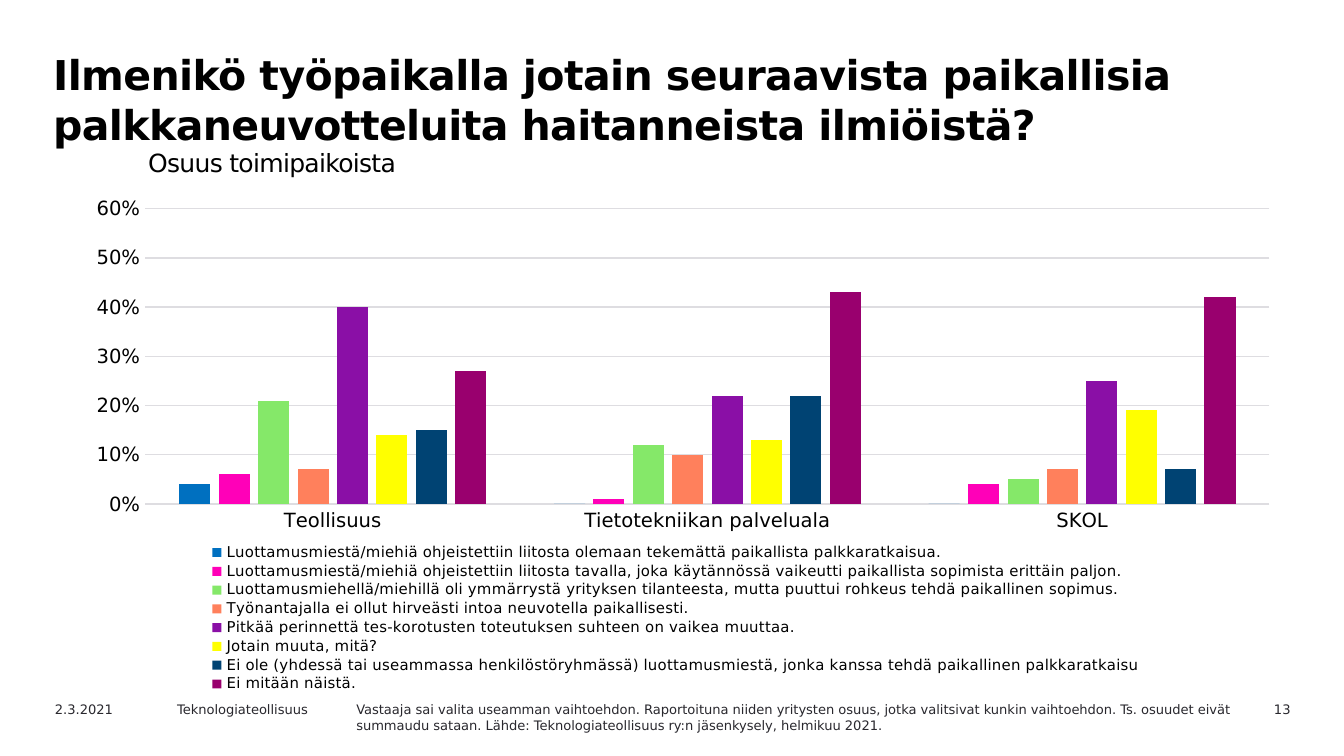
from dataclasses import dataclass

from lxml import etree
from pptx import Presentation
from pptx.chart.data import CategoryChartData
from pptx.dml.color import RGBColor
from pptx.enum.chart import XL_CHART_TYPE, XL_LEGEND_POSITION, XL_TICK_MARK
from pptx.enum.text import MSO_ANCHOR, MSO_AUTO_SIZE, PP_ALIGN
from pptx.oxml.ns import qn
from pptx.util import Cm, Pt

CLUSTERED = XL_CHART_TYPE.COLUMN_CLUSTERED
LEGEND_BOTTOM = XL_LEGEND_POSITION.BOTTOM
NO_TICK = XL_TICK_MARK.NONE
TOP = MSO_ANCHOR.TOP
NO_AUTOFIT = MSO_AUTO_SIZE.NONE
LEFT, RIGHT = PP_ALIGN.LEFT, PP_ALIGN.RIGHT


@dataclass(frozen=True)
class Theme:
    """Font, colours and type sizes of the slide."""

    font: str = "DejaVu Sans"
    ink: str = "000000"
    muted: str = "29282E"
    grid: str = "DEDDE1"
    title: float = 22
    subtitle: float = 13.4
    chart: float = 10
    axis: float = 10.5
    legend: float = 8
    footer: float = 7
    rule: float = 0.75


THEME = Theme()

TITLE = ("Ilmenikö työpaikalla jotain seuraavista paikallisia "
         "palkkaneuvotteluita haitanneista ilmiöistä?")
FOOTNOTE = ("Vastaaja sai valita useamman vaihtoehdon. Raportoituna niiden yritysten "
            "osuus, jotka valitsivat kunkin vaihtoehdon. Ts. osuudet eivät summaudu "
            "sataan. Lähde: Teknologiateollisuus ry:n jäsenkysely, helmikuu 2021.")
FOOTER_TOP, FOOTER_HEIGHT = 13.13, 0.46

SECTORS = ("Teollisuus", "Tietotekniikan palveluala", "SKOL")
ANSWERS = (
    ("Luottamusmiestä/miehiä ohjeistettiin liitosta olemaan tekemättä paikallista "
     "palkkaratkaisua.", "0070C0", (0.04, 0, 0)),
    ("Luottamusmiestä/miehiä ohjeistettiin liitosta tavalla, joka käytännössä vaikeutti "
     "paikallista sopimista erittäin paljon.", "FF00B8", (0.06, 0.01, 0.04)),
    ("Luottamusmiehellä/miehillä oli ymmärrystä yrityksen tilanteesta, mutta puuttui "
     "rohkeus tehdä paikallinen sopimus.", "85E869", (0.21, 0.12, 0.05)),
    ("Työnantajalla ei ollut hirveästi intoa neuvotella paikallisesti.",
     "FF805C", (0.07, 0.1, 0.07)),
    ("Pitkää perinnettä tes-korotusten toteutuksen suhteen on vaikea muuttaa.",
     "8A0FA6", (0.4, 0.22, 0.25)),
    ("Jotain muuta, mitä?", "FFFF00", (0.14, 0.13, 0.19)),
    ("Ei ole (yhdessä tai useammassa henkilöstöryhmässä) luottamusmiestä, jonka kanssa "
     "tehdä paikallinen palkkaratkaisu", "004373", (0.15, 0.22, 0.07)),
    ("Ei mitään näistä.", "99006E", (0.27, 0.43, 0.42)),
)
PLOT_AREA = {"x": 0.072, "y": 0.041, "w": 0.911, "h": 0.601}
LEGEND_AREA = {"x": 0.12, "y": 0.715, "w": 0.765, "h": 0.284}


def style_font(font, size, color, bold=False):
    """Apply the theme font with a size, colour and weight."""
    font.name = THEME.font
    font.size = Pt(size)
    font.bold = bold
    font.color.rgb = RGBColor.from_string(color)


def place(shape, left, top, width, height):
    """Move and size a shape, in centimetres."""
    shape.left, shape.top = Cm(left), Cm(top)
    shape.width, shape.height = Cm(width), Cm(height)


def write(shape, text, size, color, bold=False, align=LEFT, tracking=0):
    """Write one plain paragraph into a shape and return it."""
    frame = shape.text_frame
    frame.word_wrap = True
    frame.auto_size = NO_AUTOFIT
    frame.vertical_anchor = TOP
    paragraph = frame.paragraphs[0]
    properties = paragraph._p.get_or_add_pPr()
    properties.set("marL", "0")
    properties.set("indent", "0")
    etree.SubElement(properties, qn("a:buNone"))
    paragraph.alignment = align
    paragraph.space_before = Pt(0)
    run = paragraph.add_run()
    run.text = text
    style_font(run.font, size, color, bold)
    if tracking:
        run.font._element.set("spc", str(round(tracking * 100)))
    return paragraph


def add_title(slide):
    """Fill the title placeholder."""
    heading = slide.shapes.title
    place(heading, 0.75, 0.78, 22.2, 1.8)
    paragraph = write(heading, TITLE, THEME.title, THEME.ink, bold=True, tracking=-0.3)
    paragraph.line_spacing = Pt(27)


def add_subtitle(slide):
    """Add the caption above the chart."""
    caption = slide.shapes.add_textbox(Cm(2.7), Cm(2.68), Cm(5.59), Cm(0.79))
    frame = caption.text_frame
    frame.margin_left = frame.margin_right = Cm(0.1)
    frame.margin_top = frame.margin_bottom = Cm(0.1)
    write(caption, "Osuus toimipaikoista", THEME.subtitle, THEME.ink, tracking=-0.4)


def add_footer(slide):
    """Add date, organisation, page number and the footnote."""
    for text, left, width, align in (
        ("2.3.2021", 0.79, 2.54, LEFT),
        ("Teknologiateollisuus", 3.1, 3.61, LEFT),
        ("13", 22.25, 2.39, RIGHT),
    ):
        label = slide.shapes.add_textbox(
            Cm(left), Cm(FOOTER_TOP), Cm(width), Cm(FOOTER_HEIGHT))
        write(label, text, THEME.footer, THEME.muted, align=align)
    footnote = slide.placeholders[1]
    place(footnote, 6.48, FOOTER_TOP, 17.63, 1.02)
    write(footnote, FOOTNOTE, THEME.footer, THEME.muted)


def style_line(line):
    """Draw a thin line in the grid colour."""
    line.color.rgb = RGBColor.from_string(THEME.grid)
    line.width = Pt(THEME.rule)


def style_axes(chart):
    """Format the sector axis and the percentage axis."""
    sectors, shares = chart.category_axis, chart.value_axis
    for axis in (sectors, shares):
        axis.major_tick_mark = axis.minor_tick_mark = NO_TICK
        style_font(axis.tick_labels.font, THEME.axis, THEME.ink)
    style_line(sectors.format.line)
    shares.minimum_scale, shares.maximum_scale, shares.major_unit = 0, 0.65, 0.1
    shares.tick_labels.number_format = "0%"
    shares.tick_labels.number_format_is_linked = False
    shares.format.line.fill.background()
    style_line(shares.major_gridlines.format.line)


def fix_layout(chart, part, position, area, **modes):
    """Place a chart part at fractions of the chart."""
    host = chart._chartSpace.find(".//" + qn(part))
    for automatic in host.findall(qn("c:layout")):
        host.remove(automatic)
    layout = etree.Element(qn("c:layout"))
    host.insert(position, layout)
    manual = etree.SubElement(layout, qn("c:manualLayout"))
    for tag, value in {**modes, "xMode": "edge", "yMode": "edge", **area}.items():
        etree.SubElement(manual, qn(f"c:{tag}")).set("val", str(value))


def add_answer_chart(slide):
    """Add the columns that show each answer's share by sector."""
    data = CategoryChartData(number_format="0%")
    data.categories = SECTORS
    for answer, _, shares in ANSWERS:
        data.add_series(answer, shares)
    chart = slide.shapes.add_chart(
        CLUSTERED, Cm(1.07), Cm(3.07), Cm(23.32), Cm(10.06), data).chart
    style_font(chart.font, THEME.chart, THEME.muted)
    chart.has_title = False
    plot = chart.plots[0]
    plot.vary_by_categories = False
    plot.gap_width, plot.overlap = 219, -27
    for series, (_, color, _) in zip(plot.series, ANSWERS):
        series.format.fill.solid()
        series.format.fill.fore_color.rgb = RGBColor.from_string(color)
        series.invert_if_negative = False
    style_axes(chart)
    chart.has_legend = True
    chart.legend.position = LEGEND_BOTTOM
    chart.legend.include_in_layout = False
    style_font(chart.legend.font, THEME.legend, THEME.ink)
    fix_layout(chart, "c:plotArea", 0, PLOT_AREA, layoutTarget="inner")
    fix_layout(chart, "c:legend", 1, LEGEND_AREA)


def main():
    """Build and save the slide."""
    deck = Presentation()
    deck.slide_width, deck.slide_height = Cm(25.4), Cm(14.29)
    slide = deck.slides.add_slide(deck.slide_layouts[1])
    add_title(slide)
    add_footer(slide)
    add_subtitle(slide)
    add_answer_chart(slide)
    deck.save("out.pptx")


if __name__ == "__main__":
    main()
